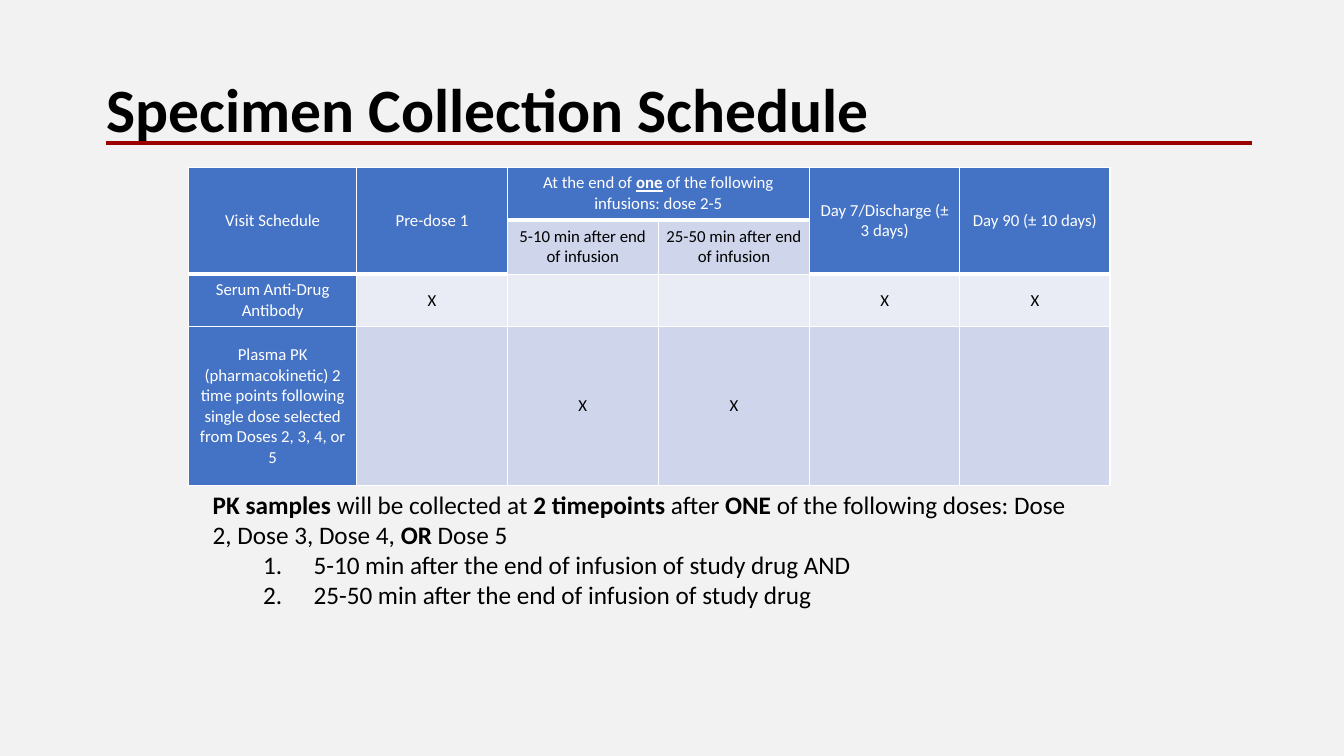
import dataclasses
import typing

import lxml.etree
import pptx
import pptx.dml.color
import pptx.enum.shapes
import pptx.enum.text
import pptx.oxml.ns
import pptx.util

Inches = pptx.util.Inches
Pt = pptx.util.Pt
qn = pptx.oxml.ns.qn
ALIGN = pptx.enum.text.PP_ALIGN
MIDDLE = pptx.enum.text.MSO_ANCHOR.MIDDLE

BLACK, WHITE, RED, PAGE = "000000", "FFFFFF", "9A0000", "F2F2F2"
BLUE, MID, PALE = "4472C4", "CFD5EA", "E9EBF5"


@dataclasses.dataclass
class Run:
    text: str
    bold: bool = False
    line: bool = False


@dataclasses.dataclass
class Cell:
    row: int
    col: int
    runs: list[Run]
    ink: str = BLACK
    rows: int = 1
    cols: int = 1


COLS = [1.67, 1.49, 1.5, 1.5, 1.49, 1.49]
ROWS = [0.52, 0.54, 0.52, 1.58]
FILLS = [BLUE, MID, PALE, MID]

HEADS = [
    Cell(0, 0, [Run("Visit Schedule")], WHITE, rows=2),
    Cell(0, 1, [Run("Pre-dose 1")], WHITE, rows=2),
    Cell(0, 2, [Run("At the end of "), Run("one", True, True),
                Run(" of the following infusions: dose 2-5")], WHITE, cols=2),
    Cell(0, 4, [Run("Day 7/Discharge (± 3 days)")], WHITE, rows=2),
    Cell(0, 5, [Run("Day 90 (± 10 days)")], WHITE, rows=2),
    Cell(1, 2, [Run("5-10 min after end of infusion")]),
    Cell(1, 3, [Run("25-50 min after end of infusion")]),
    Cell(2, 0, [Run("Serum Anti-Drug Antibody")], WHITE),
    Cell(3, 0, [Run("Plasma PK (pharmacokinetic) 2 time points following "
                    "single dose selected from Doses 2, 3, 4, or 5")], WHITE),
]
MARKS = [Cell(row, col, [Run("X")])
         for row, cols in ((2, (1, 4, 5)), (3, (2, 3))) for col in cols]

NOTE = [
    Run("PK samples ", True), Run("will be collected at "),
    Run("2 timepoints ", True), Run("after "), Run("ONE ", True),
    Run("of the following doses: Dose 2, Dose 3, Dose 4, "),
    Run("OR", True), Run(" Dose 5"),
]
STEPS = [
    "5-10 min after the end of infusion of study drug AND",
    "25-50 min after the end of infusion of study drug",
]


def color(code: str) -> pptx.dml.color.RGBColor:
    return pptx.dml.color.RGBColor.from_string(code)


def place(shape: typing.Any, left: float, top: float,
          width: float, height: float) -> None:
    shape.left, shape.top = Inches(left), Inches(top)
    shape.width, shape.height = Inches(width), Inches(height)


def write(para: typing.Any, runs: list[Run], size: float, ink: str) -> None:
    for item in runs:
        run = para.add_run()
        run.text = item.text
        font = run.font
        font.name, font.size = "Calibri", Pt(size)
        font.bold, font.underline = item.bold, item.line
        font.color.rgb = color(ink)


def edge(cell: typing.Any, base: float) -> None:
    """Draw white borders on a cell, with its own width at the bottom."""
    props = cell._tc.get_or_add_tcPr()
    widths = {"a:lnL": 1, "a:lnR": 1, "a:lnT": 1, "a:lnB": base}
    for spot, (tag, width) in enumerate(widths.items()):
        line = lxml.etree.Element(qn(tag), w=str(Pt(width)))
        fill = lxml.etree.SubElement(line, qn("a:solidFill"))
        lxml.etree.SubElement(fill, qn("a:srgbClr"), val=WHITE)
        props.insert(spot, line)


def bullet(para: typing.Any, tag: str, left: float, hang: float,
           **keys: str) -> None:
    """Set the indent and the bullet kind of a paragraph."""
    props = para._p.get_or_add_pPr()
    props.set("marL", str(Inches(left)))
    props.set("indent", str(Inches(hang)))
    lxml.etree.SubElement(props, qn(tag), **keys)


def add_title(slide: typing.Any) -> None:
    title = slide.shapes.title
    place(title, 0.96, 0.84, 10.96, 0.55)
    frame = title.text_frame
    frame.auto_size = pptx.enum.text.MSO_AUTO_SIZE.NONE
    frame.vertical_anchor = MIDDLE
    para = frame.paragraphs[0]
    para.alignment, para.line_spacing = ALIGN.LEFT, 0.9
    write(para, [Run("Specimen Collection Schedule", True)], 44, BLACK)


def add_grid(slide: typing.Any) -> None:
    table = slide.shapes.add_table(
        len(ROWS), len(COLS), Inches(1.87), Inches(1.66),
        Inches(sum(COLS)), Inches(sum(ROWS))).table
    table.first_row = table.horz_banding = False
    for col, width in zip(table.columns, COLS):
        col.width = Inches(width)
    for row, height in zip(table.rows, ROWS):
        row.height = Inches(height)
    for r, shade in enumerate(FILLS):
        for c in range(len(COLS)):
            cell = table.cell(r, c)
            cell.fill.solid()
            cell.fill.fore_color.rgb = color(BLUE if c == 0 else shade)
            cell.margin_left = cell.margin_right = Inches(0.07)
            cell.margin_top = cell.margin_bottom = 0
            cell.vertical_anchor = MIDDLE
            edge(cell, 3 if r == 0 else 1)
    for item in HEADS + MARKS:
        cell = table.cell(item.row, item.col)
        if item.rows * item.cols > 1:
            cell.merge(table.cell(item.row + item.rows - 1,
                                  item.col + item.cols - 1))
        para = cell.text_frame.paragraphs[0]
        para.alignment = ALIGN.CENTER
        write(para, item.runs, 12, item.ink)


def add_note(slide: typing.Any) -> None:
    body = slide.placeholders[1]
    place(body, 2.01, 4.8, 8.85, 1.31)
    frame = body.text_frame
    frame.auto_size = pptx.enum.text.MSO_AUTO_SIZE.NONE
    for spot, runs in enumerate([NOTE] + [[Run(step)] for step in STEPS]):
        para = frame.paragraphs[0] if spot == 0 else frame.add_paragraph()
        para.space_before, para.line_spacing = Pt(0), 1.0
        if spot == 0:
            bullet(para, "a:buNone", 0, 0)
        else:
            para.level = 1
            bullet(para, "a:buFont", 1, -0.5, typeface="+mj-lt")
            bullet(para, "a:buAutoNum", 1, -0.5, type="arabicPeriod")
        write(para, runs, 18, BLACK)


def add_rule(slide: typing.Any) -> None:
    rule = slide.shapes.add_connector(
        pptx.enum.shapes.MSO_CONNECTOR.STRAIGHT,
        Inches(1.05), Inches(1.42), Inches(12.42), Inches(1.42))
    rule.line.color.rgb = color(RED)
    rule.line.width = Pt(3)
    lxml.etree.SubElement(rule._element.spPr, qn("a:effectLst"))


def main() -> None:
    deck = pptx.Presentation()
    deck.slide_width, deck.slide_height = Inches(13.33), Inches(7.5)
    slide = deck.slides.add_slide(deck.slide_layouts[1])
    slide.background.fill.solid()
    slide.background.fill.fore_color.rgb = color(PAGE)
    add_title(slide)
    add_grid(slide)
    add_note(slide)
    add_rule(slide)
    deck.save("out.pptx")


if __name__ == "__main__":
    main()
